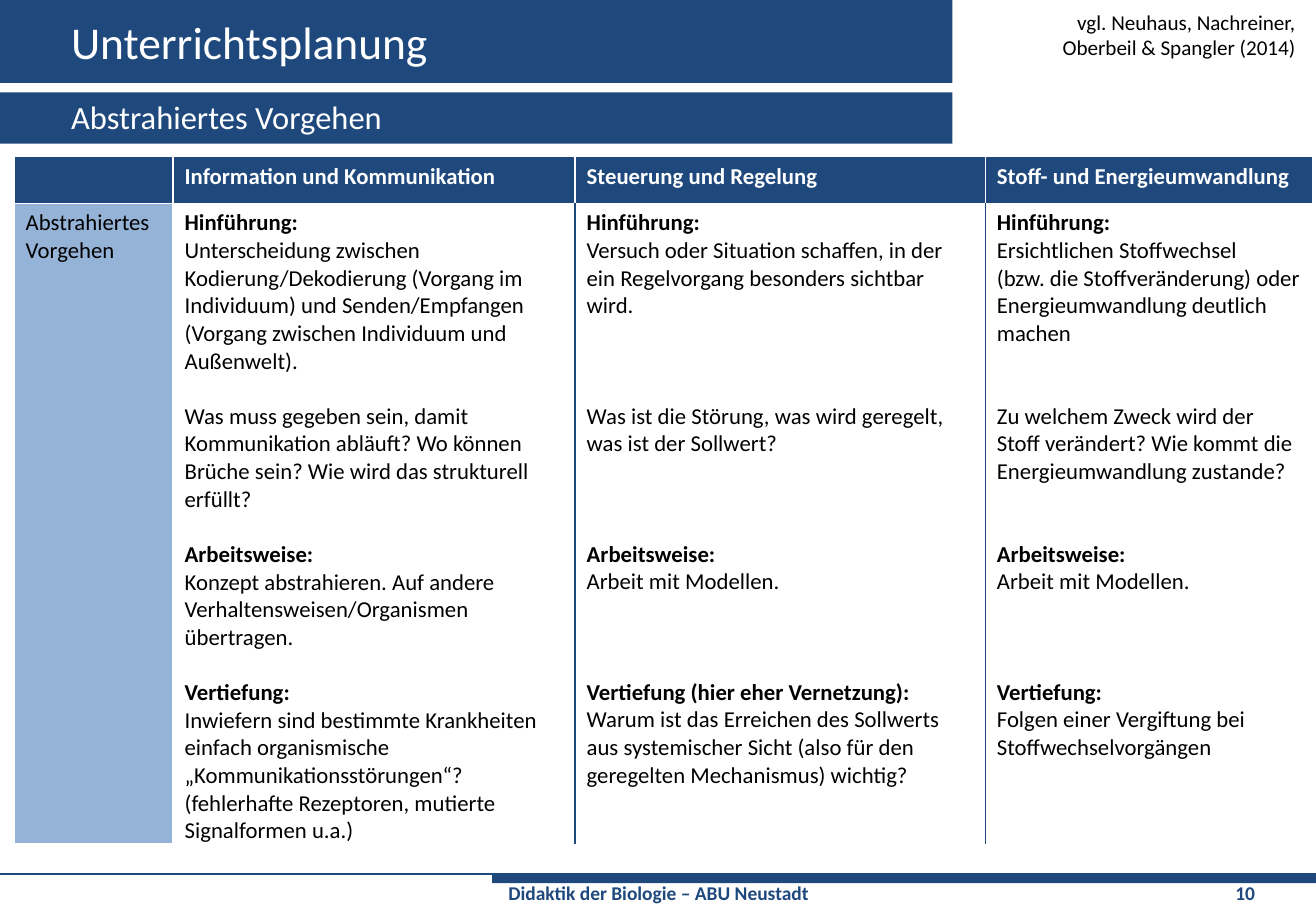
from dataclasses import dataclass

from lxml import etree
from pptx import Presentation
from pptx import util as u
from pptx.dml.color import RGBColor
from pptx.enum import shapes, text
from pptx.oxml import ns

NAVY = RGBColor(0x1F, 0x49, 0x7D)
PALE_BLUE = RGBColor(0x95, 0xB3, 0xD7)
WHITE = RGBColor(0xFF, 0xFF, 0xFF)
BLACK = RGBColor(0, 0, 0)
SLIDE_WIDTH = u.Inches(11.26)
SLIDE_HEIGHT = u.Inches(63 / 8)
LINE_HEIGHT = 17
COLUMN_WIDTHS = (1.36, 3.44, 3.51, 2.8)
ROW_HEIGHTS = (0.4, 5.46)


@dataclass(frozen=True)
class Bar:
    left: float
    top: float
    width: float
    height: float


@dataclass(frozen=True)
class Line:
    words: str
    bold: bool = False
    gap: int = 0


@dataclass(frozen=True)
class Label:
    box: Bar
    lines: tuple[Line, ...]
    size: int
    color: RGBColor = WHITE
    align: text.PP_ALIGN = text.PP_ALIGN.LEFT
    anchor: text.MSO_ANCHOR = text.MSO_ANCHOR.TOP
    side_margin: float = 0.1


BARS = (
    Bar(0, 0, 8.15, 0.71),
    Bar(0, 0.79, 8.15, 0.44),
    Bar(4.21, 7.48, 7.05, 0.08),
)
TITLE = Label(Bar(0.51, 0, 7.56, 0.71), (Line("Unterrichtsplanung"),), 28,
              anchor=text.MSO_ANCHOR.MIDDLE)
SUBTITLE = Label(Bar(0.51, 0.78, 7.56, 0.44), (Line("Abstrahiertes Vorgehen"),), 20)
CITATION = Label(
    Bar(6.58, 0.14, 4.65, 0.31),
    (Line("vgl. Neuhaus, Nachreiner,"), Line("Oberbeil & Spangler (2014)")),
    13, BLACK, text.PP_ALIGN.RIGHT, text.MSO_ANCHOR.MIDDLE, 0.15)
FOOTER = Label(Bar(4.21, 7.49, 7.05, 0.31),
               (Line("Didaktik der Biologie – ABU Neustadt\t10", True),),
               12, NAVY, side_margin=0.14)

HEADINGS = ("", "Information und Kommunikation", "Steuerung und Regelung",
            "Stoff- und Energieumwandlung")
APPROACHES = (
    (Line("Abstrahiertes Vorgehen"),),
    (
        Line("Hinführung:", True),
        Line("Unterscheidung zwischen Kodierung/Dekodierung (Vorgang im Individuum) und "
             "Senden/Empfangen (Vorgang zwischen Individuum und Außenwelt)."),
        Line("Was muss gegeben sein, damit Kommunikation abläuft? Wo können Brüche sein? "
             "Wie wird das strukturell erfüllt?", gap=1),
        Line("Arbeitsweise:", True, 1),
        Line("Konzept abstrahieren. Auf andere Verhaltensweisen/Organismen übertragen."),
        Line("Vertiefung:", True, 1),
        Line("Inwiefern sind bestimmte Krankheiten einfach organismische "
             "„Kommunikationsstörungen“? (fehlerhafte Rezeptoren, mutierte "
             "Signalformen u.a.)"),
    ),
    (
        Line("Hinführung:", True),
        Line("Versuch oder Situation schaffen, in der ein Regelvorgang besonders "
             "sichtbar wird."),
        Line("Was ist die Störung, was wird geregelt, was ist der Sollwert?", gap=3),
        Line("Arbeitsweise:", True, 3),
        Line("Arbeit mit Modellen."),
        Line("Vertiefung (hier eher Vernetzung):", True, 3),
        Line("Warum ist das Erreichen des Sollwerts aus systemischer Sicht (also für den "
             "geregelten Mechanismus) wichtig?"),
    ),
    (
        Line("Hinführung:", True),
        Line("Ersichtlichen Stoffwechsel"),
        Line("(bzw. die Stoffveränderung) oder Energieumwandlung deutlich machen"),
        Line("Zu welchem Zweck wird der Stoff verändert? Wie kommt die "
             "Energieumwandlung zustande?", gap=2),
        Line("Arbeitsweise:", True, 2),
        Line("Arbeit mit Modellen."),
        Line("Vertiefung:", True, 3),
        Line("Folgen einer Vergiftung bei Stoffwechselvorgängen"),
    ),
)


def write_lines(frame, lines: tuple[Line, ...], size: int, color: RGBColor,
                align: text.PP_ALIGN = text.PP_ALIGN.LEFT) -> None:
    for index, line in enumerate(lines):
        paragraph = frame.paragraphs[0] if index == 0 else frame.add_paragraph()
        paragraph.alignment = align
        if line.gap:
            paragraph.space_before = u.Pt(line.gap * LINE_HEIGHT)
        run = paragraph.add_run()
        run.text = line.words
        font_format = {"name": "Calibri", "size": u.Pt(size), "bold": line.bold}
        for key, value in font_format.items():
            setattr(run.font, key, value)
        run.font.color.rgb = color


def draw_bar(slide, bar: Bar) -> None:
    band = slide.shapes.add_shape(
        shapes.MSO_SHAPE.RECTANGLE, u.Inches(bar.left), u.Inches(bar.top),
        u.Inches(bar.width), u.Inches(bar.height))
    band.shadow.inherit = False
    band.fill.solid()
    band.fill.fore_color.rgb = NAVY
    band.line.fill.background()


def draw_label(slide, label: Label):
    box = label.box
    frame = slide.shapes.add_textbox(
        u.Inches(box.left), u.Inches(box.top),
        u.Inches(box.width), u.Inches(box.height)).text_frame
    frame_format = {
        "word_wrap": True,
        "vertical_anchor": label.anchor,
        "margin_left": u.Inches(label.side_margin),
        "margin_right": u.Inches(label.side_margin),
    }
    for key, value in frame_format.items():
        setattr(frame, key, value)
    write_lines(frame, label.lines, label.size, label.color, label.align)
    return frame


def draw_footer(slide) -> None:
    rule = slide.shapes.add_connector(
        shapes.MSO_CONNECTOR.STRAIGHT, 0, u.Inches(7.48), SLIDE_WIDTH, u.Inches(7.48))
    rule.line.color.rgb = NAVY
    rule.line.width = u.Pt(1)
    etree.SubElement(rule._element.spPr, ns.qn("a:effectLst"))
    footer = draw_label(slide, FOOTER)
    properties = footer.paragraphs[0]._p.get_or_add_pPr()
    tabs = etree.SubElement(properties, ns.qn("a:tabLst"))
    etree.SubElement(tabs, ns.qn("a:tab"), pos=str(u.Inches(6.22)), algn="l")


def style_cell(cell, fill: RGBColor, borders: dict[str, RGBColor]) -> None:
    properties = cell._tc.get_or_add_tcPr()
    for side in "LRTB":
        edge = etree.SubElement(properties, ns.qn(f"a:ln{side}"), w=str(u.Pt(1)))
        solid = etree.SubElement(edge, ns.qn("a:solidFill"))
        etree.SubElement(solid, ns.qn("a:srgbClr"), val=str(borders.get(side, WHITE)))
    cell.fill.solid()
    cell.fill.fore_color.rgb = fill


def draw_table(slide) -> None:
    table = slide.shapes.add_table(
        len(ROW_HEIGHTS), len(COLUMN_WIDTHS), u.Inches(0.12), u.Inches(1.34),
        u.Inches(sum(COLUMN_WIDTHS)), u.Inches(sum(ROW_HEIGHTS))).table
    for row, height in zip(table.rows, ROW_HEIGHTS):
        row.height = u.Inches(height)
    last = len(COLUMN_WIDTHS) - 1
    for index, width in enumerate(COLUMN_WIDTHS):
        table.columns[index].width = u.Inches(width)
        heading, approach = table.cell(0, index), table.cell(1, index)
        style_cell(heading, NAVY, {})
        style_cell(approach, WHITE if index else PALE_BLUE, {
            "L": NAVY if index > 1 else WHITE,
            "R": NAVY if 0 < index < last else WHITE,
        })
        if HEADINGS[index]:
            write_lines(heading.text_frame, (Line(HEADINGS[index], True),), 14, WHITE)
        write_lines(approach.text_frame, APPROACHES[index], 14, BLACK)


presentation = Presentation()
presentation.slide_width = SLIDE_WIDTH
presentation.slide_height = SLIDE_HEIGHT
planning = presentation.slides.add_slide(presentation.slide_layouts[6])
for bar in BARS:
    draw_bar(planning, bar)
draw_footer(planning)
draw_table(planning)
for label in (TITLE, SUBTITLE, CITATION):
    draw_label(planning, label)
presentation.save("out.pptx")
